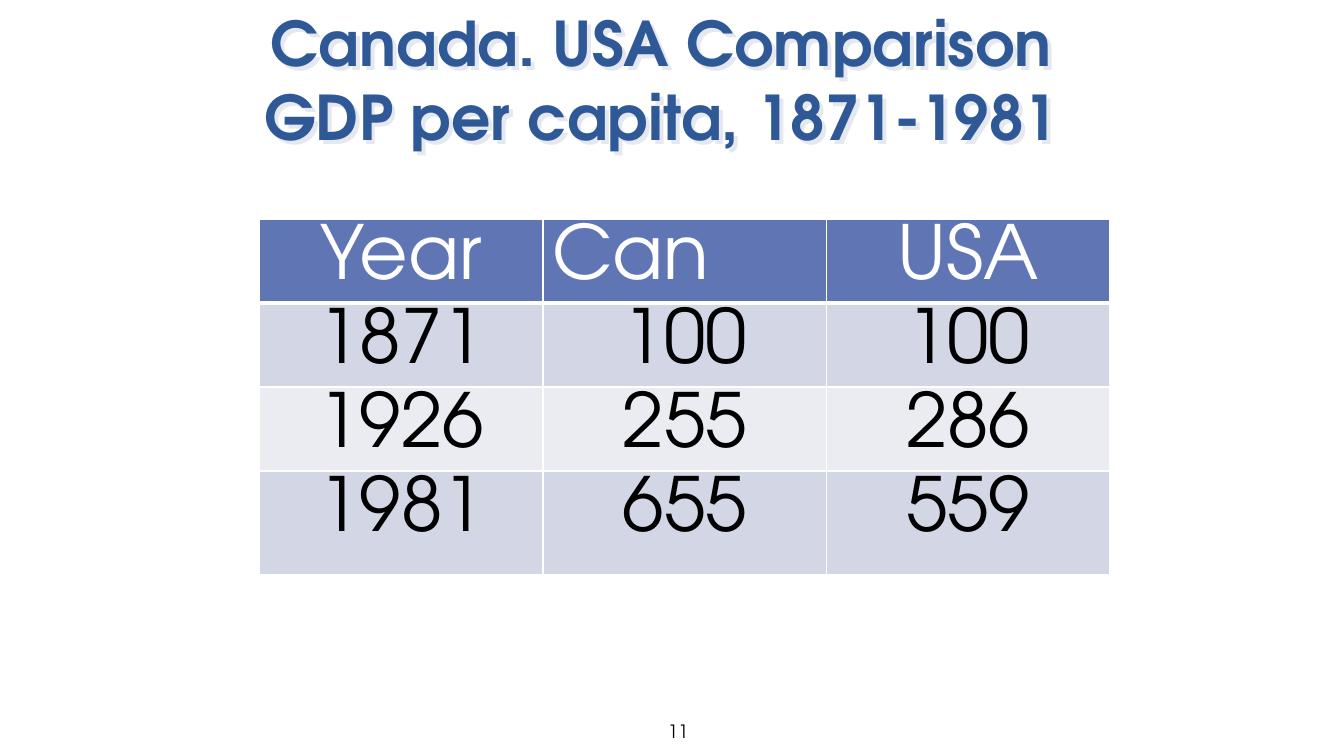
from dataclasses import dataclass

from lxml import etree
from pptx import Presentation
from pptx.dml.color import RGBColor
from pptx.enum.text import MSO_ANCHOR, PP_ALIGN
from pptx.oxml.ns import qn
from pptx.util import Inches, Pt

CENTER, LEFT = PP_ALIGN.CENTER, PP_ALIGN.LEFT
TOP, MIDDLE = MSO_ANCHOR.TOP, MSO_ANCHOR.MIDDLE
FONT = "TeX Gyre Adventor"
COLORS = {
    "title": "2F5897",
    "shadow": "E5E8EE",
    "head": "6076B4",
    "odd": "D2D6E5",
    "even": "EAECF2",
    "white": "FFFFFF",
    "black": "000000",
}
ROWS = [
    ("Year", "Can", "USA"),
    ("1871", "100", "100"),
    ("1926", "255", "286"),
    ("1981", "655", "559"),
]
HEIGHTS = [5 / 8, 5 / 8, 5 / 8, 0.77]
COL_WIDTH = 2.11


@dataclass
class Label:
    text: str
    left: float
    top: float
    width: float
    height: float
    size: float
    color: str
    bold: bool = False
    anchor: MSO_ANCHOR = TOP
    shadow: bool = False


TITLE = Label("Canada. USA Comparison\vGDP per capita, 1871-1981",
              0.28, 0.12, 9.28, 0.94, 33, "title", True, MIDDLE, True)
NUMBER = Label("11", 4, 5.31, 2.09, 0.25, 9.8, "black")


def style(par, size: float, color: str, bold: bool = False, align=CENTER) -> None:
    par.alignment = align
    for run in par.runs:
        font = run.font
        font.name, font.size, font.bold = FONT, Pt(size), bold
        font.color.rgb = RGBColor.from_string(COLORS[color])


def add_shadow(box) -> None:
    # On an unfilled box the shadow falls behind the letters
    effects = etree.SubElement(box._element.spPr, qn("a:effectLst"))
    outer = etree.SubElement(effects, qn("a:outerShdw"),
                             dist=str(Pt(3)), dir="2700000")
    etree.SubElement(outer, qn("a:srgbClr"), val=COLORS["shadow"])


def add_label(slide, item: Label) -> None:
    box = slide.shapes.add_textbox(Inches(item.left), Inches(item.top),
                                   Inches(item.width), Inches(item.height))
    frame = box.text_frame
    frame.word_wrap = True
    frame.vertical_anchor = item.anchor
    frame.text = item.text
    style(frame.paragraphs[0], item.size, item.color, item.bold)
    if item.shadow:
        add_shadow(box)


def add_border(cell, base: float) -> None:
    props = cell._tc.get_or_add_tcPr()
    for side, width in (("lnL", 1), ("lnR", 1), ("lnT", 1), ("lnB", base)):
        line = etree.SubElement(props, qn(f"a:{side}"), w=str(Pt(width)))
        fill = etree.SubElement(line, qn("a:solidFill"))
        etree.SubElement(fill, qn("a:srgbClr"), val=COLORS["white"])


def fill_cell(cell, text: str, fill: str, color: str, align, base: float) -> None:
    cell.margin_left = cell.margin_right = Inches(0.07)
    cell.margin_top = cell.margin_bottom = Inches(0.04)
    add_border(cell, base)
    cell.fill.solid()
    cell.fill.fore_color.rgb = RGBColor.from_string(COLORS[fill])
    cell.text_frame.text = text
    par = cell.text_frame.paragraphs[0]
    par.line_spacing = Pt(37)
    style(par, 40, color, align=align)


def add_grid(slide) -> None:
    count = len(ROWS[0])
    frame = slide.shapes.add_table(
        len(ROWS), count, Inches(1.93), Inches(1.63),
        Inches(COL_WIDTH * count), Inches(2.99))
    table = frame.table
    for col in table.columns:
        col.width = Inches(COL_WIDTH)
    for i, (texts, height) in enumerate(zip(ROWS, HEIGHTS)):
        table.rows[i].height = Inches(height)
        fill = "head" if i == 0 else "odd" if i % 2 else "even"
        color, base = ("black", 1) if i else ("white", 3)
        for j, text in enumerate(texts):
            align = LEFT if text == "Can" else CENTER
            fill_cell(table.cell(i, j), text, fill, color, align, base)
    frame.height = Inches(2.99)


def main() -> None:
    deck = Presentation()
    deck.slide_width, deck.slide_height = Inches(10), Inches(10 * 9 / 16)
    slide = deck.slides.add_slide(deck.slide_layouts[6])

    # Title, comparison table, page number
    add_label(slide, TITLE)
    add_grid(slide)
    add_label(slide, NUMBER)
    deck.save("out.pptx")


if __name__ == "__main__":
    main()
